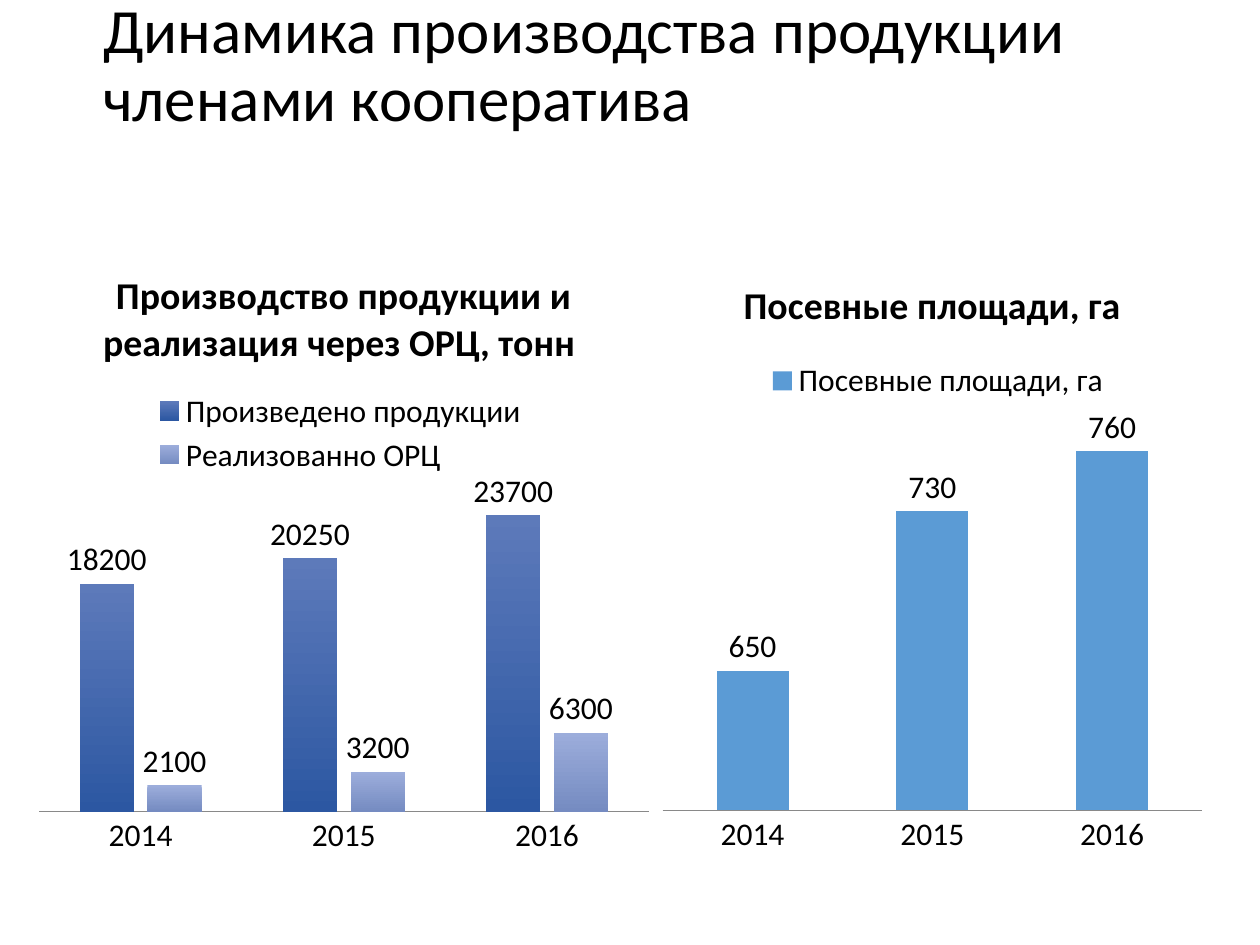
import pptx
import pptx.chart.data
import pptx.dml.color
import pptx.enum.chart
import pptx.enum.text
import pptx.oxml
import pptx.oxml.ns
import pptx.util

Inches = pptx.util.Inches
Pt = pptx.util.Pt
RGB = pptx.dml.color.RGBColor
Kind = pptx.enum.chart
qn = pptx.oxml.ns.qn

BLACK = RGB(0x00, 0x00, 0x00)
GRAY = RGB(0x89, 0x89, 0x89)
BLUE = RGB(0x5B, 0x9B, 0xD5)
NAVY = (RGB(0x5D, 0x7A, 0xBA), RGB(0x2C, 0x57, 0xA2))
LILAC = (RGB(0x9C, 0xAD, 0xDB), RGB(0x75, 0x8B, 0xC1))
FONT = "Calibri"
YEARS = ["2014", "2015", "2016"]


def style(font, size, bold=False):
    font.name = FONT
    font.size = Pt(size)
    font.bold = bold
    font.color.rgb = BLACK


def write(frame, text, size, bold=False, space=None):
    frame.text = text
    para = frame.paragraphs[0]
    para.line_spacing = space
    style(para.runs[0].font, size, bold)


def paint(fill, color):
    if isinstance(color, RGB):
        fill.solid()
        fill.fore_color.rgb = color
        return
    fill.gradient()
    fill.gradient_angle = 270
    for stop, shade in zip(fill.gradient_stops, color):
        stop.color.rgb = shade


def place(node, index, box, inner=False):
    old = node.find(qn("c:layout"))
    if old is not None:
        node.remove(old)
    target = '<c:layoutTarget val="inner"/>' if inner else ""
    modes = "".join(f'<c:{key}Mode val="edge"/>' for key in "xy")
    sizes = "".join(f'<c:{key} val="{val}"/>' for key, val in zip("xywh", box))
    node.insert(index, pptx.oxml.parse_xml(
        f'<c:layout {pptx.oxml.ns.nsdecls("c")}><c:manualLayout>'
        f'{target}{modes}{sizes}</c:manualLayout></c:layout>'))


def add_bars(slide, box, title, rows, limits, area, key):
    data = pptx.chart.data.CategoryChartData()
    data.categories = YEARS
    for name, values, color in rows:
        data.add_series(name, values)
    chart = slide.shapes.add_chart(
        Kind.XL_CHART_TYPE.COLUMN_CLUSTERED, *map(Inches, box), data).chart
    style(chart.font, 18)
    chart.has_title = True
    write(chart.chart_title.text_frame, title, 21.6, bold=True)
    chart.chart_title.include_in_layout = False

    chart.has_legend = True
    chart.legend.position = Kind.XL_LEGEND_POSITION.TOP
    chart.legend.include_in_layout = False
    style(chart.legend.font, 18)

    plot = chart.plots[0]
    plot.vary_by_categories = False
    plot.gap_width = 150
    plot.overlap = -25
    plot.has_data_labels = True
    labels = plot.data_labels
    labels.show_value = True
    labels.position = Kind.XL_LABEL_POSITION.OUTSIDE_END
    style(labels.font, 18)
    for series, row in zip(plot.series, rows):
        paint(series.format.fill, row[2])

    axis = chart.category_axis
    axis.major_tick_mark = Kind.XL_TICK_MARK.NONE
    axis.format.line.color.rgb = GRAY
    axis.format.line.width = Pt(0.75)
    style(axis.tick_labels.font, 18)
    scale = chart.value_axis
    scale.visible = False
    scale.has_major_gridlines = False
    scale.minimum_scale, scale.maximum_scale = limits

    place(chart.plots[0]._element.getparent(), 0, area, inner=True)
    place(chart.legend._element, 1, key)


def add_title(slide, text):
    title = slide.shapes.title
    title.left, title.top = Inches(0.72), Inches(0)
    title.width, title.height = Inches(8.57), Inches(1.07)
    frame = title.text_frame
    frame.word_wrap = True
    frame.auto_size = pptx.enum.text.MSO_AUTO_SIZE.NONE
    frame.vertical_anchor = pptx.enum.text.MSO_ANCHOR.MIDDLE
    write(frame, text, 36, space=0.9)
    frame.paragraphs[0].alignment = pptx.enum.text.PP_ALIGN.LEFT


def main():
    deck = pptx.Presentation()
    deck.slide_width, deck.slide_height = Inches(10), Inches(7.5)
    slide = deck.slides.add_slide(deck.slide_layouts[5])
    add_bars(
        slide, (0.21, 1.92, 5.04, 4.97),
        "Производство продукции и реализация через ОРЦ, тонн ",
        [("Произведено продукции ", (18200, 20250, 23700), NAVY),
         ("Реализованно ОРЦ", (2100, 3200, 6300), LILAC)],
        (0, 25000), (0.02, 0.41, 0.96, 0.5), (0.2, 0.23, 0.6, 0.15))
    add_bars(
        slide, (5.17, 2, 4.46, 4.87), "Посевные площади, га",
        [("Посевные площади, га", (650, 730, 760), BLUE)],
        (580, 780), (0.02, 0.26, 0.96, 0.65), (0.2, 0.17, 0.62, 0.08))
    add_title(slide, "Динамика производства продукции членами кооператива")
    deck.save("out.pptx")


if __name__ == "__main__":
    main()
